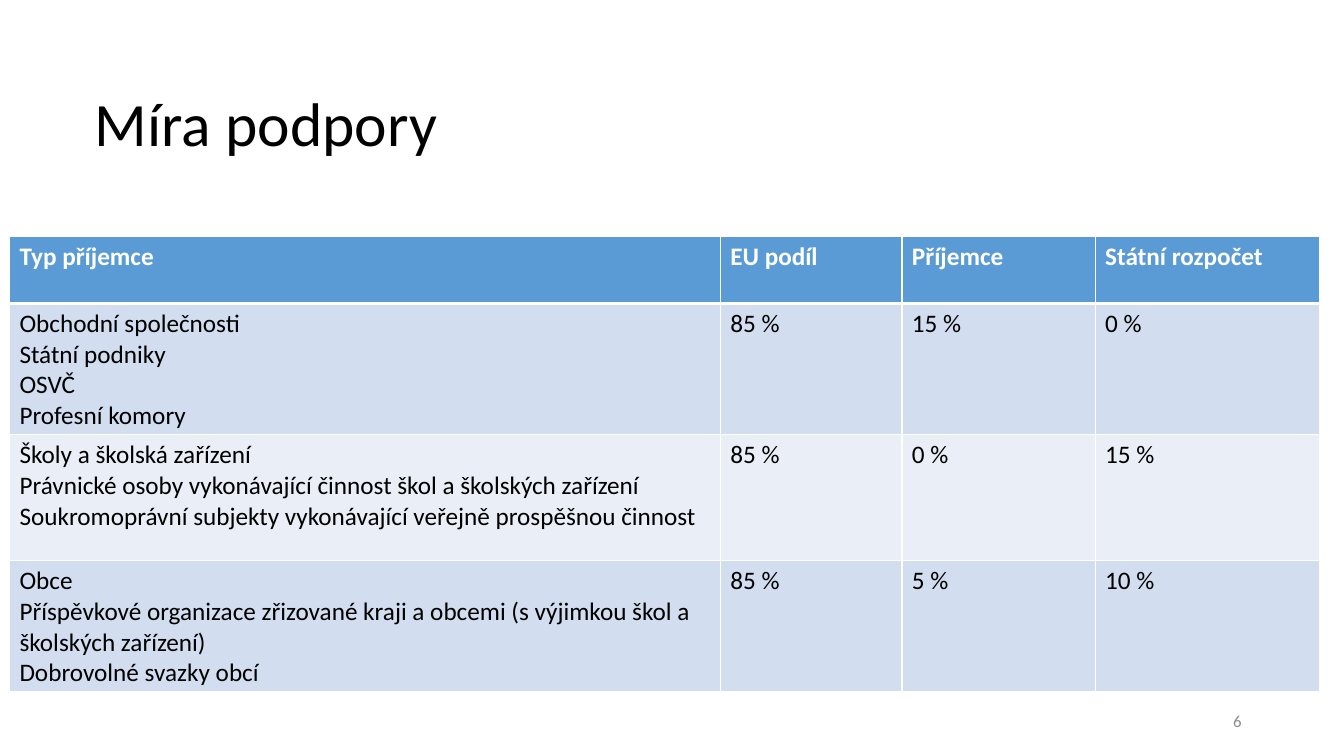
from lxml import etree
from pptx import Presentation
from pptx import util as u
from pptx.dml import color
from pptx.enum import text
from pptx.oxml import ns

PX = 9525


def px(n):
    return u.Emu(n * PX)


def rgb(code):
    return color.RGBColor.from_string(code)


class Deck:
    font = "Calibri"
    ink = "000000"
    white = "FFFFFF"
    head = "5B9BD5"
    bands = ("D2DEEF", "EAEFF7")

    def __init__(self, wide, high):
        self.prs = Presentation()
        self.prs.slide_width = px(wide)
        self.prs.slide_height = px(high)
        self.slide = self.prs.slides.add_slide(self.prs.slide_layouts[6])

    def prose(self, frame, lines, size, tint, bold=False, align=None, space=None):
        for i, line in enumerate(lines):
            para = frame.add_paragraph() if i else frame.paragraphs[0]
            para.alignment = align
            para.line_spacing = space
            run = para.add_run()
            run.text = line
            run.font.name = self.font
            run.font.size = u.Pt(size)
            run.font.bold = bold
            run.font.color.rgb = rgb(tint)

    def label(self, box, line, size, tint, align=None, space=None):
        frame = self.slide.shapes.add_textbox(*map(px, box)).text_frame
        frame.word_wrap = True
        frame.vertical_anchor = text.MSO_ANCHOR.MIDDLE
        self.prose(frame, [line], size, tint, align=align, space=space)

    def edge(self, cell, side, width):
        props = cell._tc.get_or_add_tcPr()
        line = etree.SubElement(props, ns.qn(f"a:ln{side}"), w=str(u.Pt(width)))
        fill = etree.SubElement(line, ns.qn("a:solidFill"))
        etree.SubElement(fill, ns.qn("a:srgbClr"), val=self.white)

    def cell(self, cell, lines, row):
        top = row == 0
        widths = {"L": 1, "R": 1, "T": 3 if row == 1 else 1, "B": 3 if top else 1}
        for side, width in widths.items():
            self.edge(cell, side, width)
        cell.fill.solid()
        cell.fill.fore_color.rgb = rgb(self.head if top else self.bands[(row - 1) % 2])
        self.prose(cell.text_frame, lines, 18, self.white if top else self.ink, top)

    def table(self, left, top, cols, rows, data):
        box = map(px, (left, top, sum(cols), sum(rows)))
        table = self.slide.shapes.add_table(len(rows), len(cols), *box).table
        for col, width in zip(table.columns, cols):
            col.width = px(width)
        for row, height in zip(table.rows, rows):
            row.height = px(height)
        for r, items in enumerate(data):
            for c, item in enumerate(items):
                self.cell(table.cell(r, c), item.split("\n"), r)


def main():
    deck = Deck(1280, 720)
    deck.label((81, 75, 1104, 92), "Míra podpory", 44, deck.ink, space=0.9)
    firms = "Obchodní společnosti\nStátní podniky\nOSVČ\nProfesní komory"
    schools = (
        "Školy a školská zařízení\n"
        "Právnické osoby vykonávající činnost škol a školských zařízení\n"
        "Soukromoprávní subjekty vykonávající veřejně prospěšnou činnost"
    )
    towns = (
        "Obce\n"
        "Příspěvkové organizace zřizované kraji a obcemi "
        "(s výjimkou škol a školských zařízení)\n"
        "Dobrovolné svazky obcí"
    )
    data = [
        ("Typ příjemce", "EU podíl", "Příjemce", "Státní rozpočet"),
        (firms, "85 %", "15 %", "0 %"),
        (schools, "85 %", "0 %", "15 %"),
        (towns, "85 %", "5 %", "10 %"),
    ]
    deck.table(9, 225, (677, 173, 184, 214), (64, 120, 120, 120), data)
    deck.label((904, 667, 288, 38), "6", 12, "8C8C8C", text.PP_ALIGN.RIGHT)
    deck.prs.save("out.pptx")


if __name__ == "__main__":
    main()
